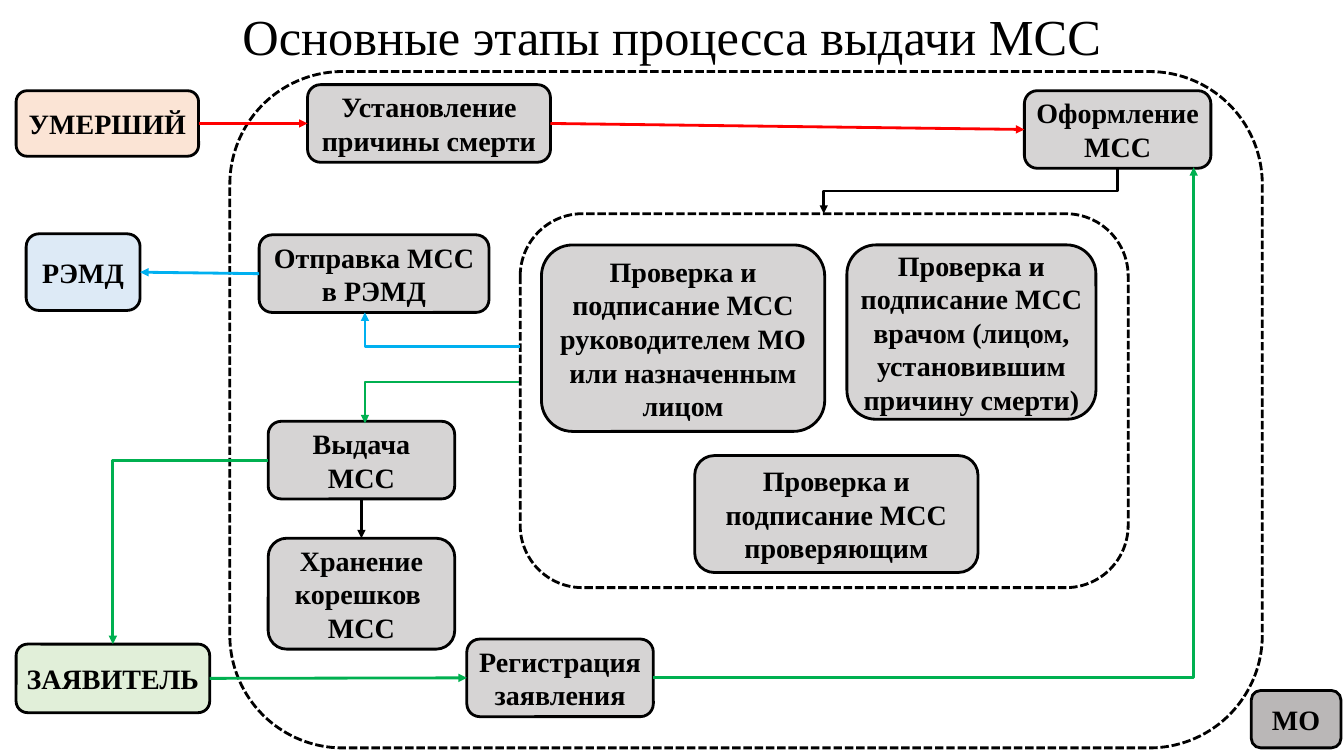
import pptx
import pptx.util
import pptx.dml.color
import pptx.enum.dml
import pptx.enum.shapes
import pptx.enum.text
import pptx.oxml
import pptx.oxml.ns
from lxml import etree

Inches = pptx.util.Inches
Pt = pptx.util.Pt
qn = pptx.oxml.ns.qn
CONNECTOR = pptx.enum.shapes.MSO_CONNECTOR
TOP, LEFT, BOTTOM, RIGHT = range(4)  # connection sites of a rounded box

COLORS = {
    "black": "000000", "red": "FF0000", "green": "00B050", "blue": "00B0F0",
    "deceased": "F8CBAD", "applicant": "C5E0B4", "registry": "BDD7EE",
    "step": "AFABAB", "organization": "767171",
}


class Diagram:
    font = "Times New Roman"
    line_width = Pt(2)

    def __init__(self, slide):
        self.s = slide

    def color(self, name):
        return pptx.dml.color.RGBColor.from_string(COLORS[name])

    def set_text(self, tf, text, size, bold=False):
        tf.text = text
        tf.word_wrap = True
        for p in tf.paragraphs:
            p.alignment = pptx.enum.text.PP_ALIGN.CENTER
            for r in p.runs:
                r.font.name, r.font.size, r.font.bold = self.font, Pt(size), bold
                r.font.color.rgb = self.color("black")

    def title(self, text):
        sp = self.s.shapes.add_textbox(0, 0, Inches(13.33), Inches(0.71))
        self.set_text(sp.text_frame, text, 36)

    def rounded(self, x, y, w, h):
        sp = self.s.shapes.add_shape(
            pptx.enum.shapes.MSO_SHAPE.ROUNDED_RECTANGLE,
            Inches(x), Inches(y), Inches(w), Inches(h))
        sp.shadow.inherit = False
        sp.line.color.rgb = self.color("black")
        sp.line.width = self.line_width
        return sp

    def frame(self, x, y, w, h):
        sp = self.rounded(x, y, w, h)
        sp.fill.background()
        sp.line.dash_style = pptx.enum.dml.MSO_LINE.SQUARE_DOT
        # Short dashes
        sp.line._get_or_add_ln().find(qn("a:prstDash")).set("val", "sysDash")

    def box(self, text, x, y, w, h, fill="step"):
        sp = self.rounded(x, y, w, h)
        sp.fill.solid()
        sp.fill.fore_color.rgb = self.color(fill)
        # Half transparent fill
        rgb = sp._element.spPr.find(qn("a:solidFill")).find(qn("a:srgbClr"))
        etree.SubElement(rgb, qn("a:alpha")).set("val", "50000")
        tf = sp.text_frame
        self.set_text(tf, text, 20, bold=True)
        tf.vertical_anchor = pptx.enum.text.MSO_ANCHOR.MIDDLE
        # The rounded corners already inset the text by about 5% of the short side
        tf.margin_left = tf.margin_right = Inches(0.1 - 0.05 * min(w, h))
        tf.margin_top = tf.margin_bottom = 0
        return sp

    def connector(self, kind, color, start=(0, 0), end=(0, 0)):
        c = self.s.shapes.add_connector(kind, *[Inches(v) for v in (*start, *end)])
        c.line.color.rgb = self.color(color)
        c.line.width = self.line_width
        etree.SubElement(c.line._get_or_add_ln(), qn("a:tailEnd")).set("type", "triangle")
        etree.SubElement(c._element.spPr, qn("a:effectLst"))
        return c

    def arrow(self, color, source, source_site, target, target_site):
        c = self.connector(CONNECTOR.STRAIGHT, color)
        c.begin_connect(source, source_site)
        c.end_connect(target, target_site)

    def corner_arrow(self, color, start, end):
        """Goes sideways first, then up or down."""
        c = self.connector(CONNECTOR.ELBOW, color, start, end)
        c._element.spPr.find(qn("a:prstGeom")).set("prst", "bentConnector2")

    def step_arrow(self, color, start, end):
        """Goes down, left and down: an elbow turned by 90 degrees."""
        cx, cy = (start[0] + end[0]) / 2, (start[1] + end[1]) / 2
        dx, dy = (end[1] - start[1]) / 2, (start[0] - end[0]) / 2
        c = self.connector(CONNECTOR.ELBOW, color, (cx - dx, cy - dy), (cx + dx, cy + dy))
        c._element.spPr.find(qn("a:xfrm")).set("rot", "5400000")


def main():
    prs = pptx.Presentation()
    prs.slide_width, prs.slide_height = Inches(13.33), Inches(7.5)
    d = Diagram(prs.slides.add_slide(prs.slide_layouts[6]))

    # Title and organization boundary
    d.frame(2.28, 0.71, 10.24, 6.71)
    d.title("Основные этапы процесса выдачи МСС")

    # Outside participants
    deceased = d.box("УМЕРШИЙ", 0.16, 0.9, 1.81, 0.65, "deceased")
    applicant = d.box("ЗАЯВИТЕЛЬ", 0.16, 6.39, 1.92, 0.68, "applicant")
    registry = d.box("РЭМД", 0.26, 2.32, 1.13, 0.76, "registry")

    # Process steps
    registration = d.box("Регистрация заявления", 4.63, 6.34, 1.85, 0.77)
    cause = d.box("Установление причины смерти", 3.05, 0.84, 2.41, 0.77)
    drafting = d.box("Оформление МСС", 10.16, 0.9, 1.85, 0.77)
    issue = d.box("Выдача МСС", 2.66, 4.18, 1.85, 0.77)
    sending = d.box("Отправка МСС в РЭМД", 2.57, 2.33, 2.28, 0.77)
    storage = d.box("Хранение корешков \nМСС", 2.66, 5.34, 1.85, 1.1)

    # Signing group
    d.frame(5.16, 2.12, 6.03, 3.71)
    signing = "Проверка и подписание МСС "
    d.box(signing + "врачом (лицом, установившим причину смерти)", 8.4, 2.43, 2.47, 1.73)
    d.box(signing + "руководителем МО или назначенным лицом", 5.37, 2.43, 2.81, 1.85)
    d.box(signing + "проверяющим", 6.89, 4.52, 2.81, 1.16)

    # Straight arrows
    d.arrow("green", applicant, RIGHT, registration, LEFT)
    d.arrow("red", deceased, RIGHT, cause, LEFT)
    d.arrow("red", cause, RIGHT, drafting, LEFT)
    d.arrow("black", issue, BOTTOM, storage, TOP)
    d.arrow("blue", sending, LEFT, registry, RIGHT)

    # Bent arrows
    d.corner_arrow("green", (6.48, 6.72), (11.84, 1.66))
    d.corner_arrow("green", (5.15, 3.79), (3.62, 4.2))
    d.corner_arrow("blue", (5.16, 3.44), (3.62, 3.1))
    d.corner_arrow("green", (2.66, 4.57), (1.12, 6.39))
    d.step_arrow("black", (11.08, 1.67), (8.17, 2.12))

    # Organization label
    d.box("МО", 12.41, 6.85, 0.89, 0.57, "organization")

    prs.save("out.pptx")


if __name__ == "__main__":
    main()
